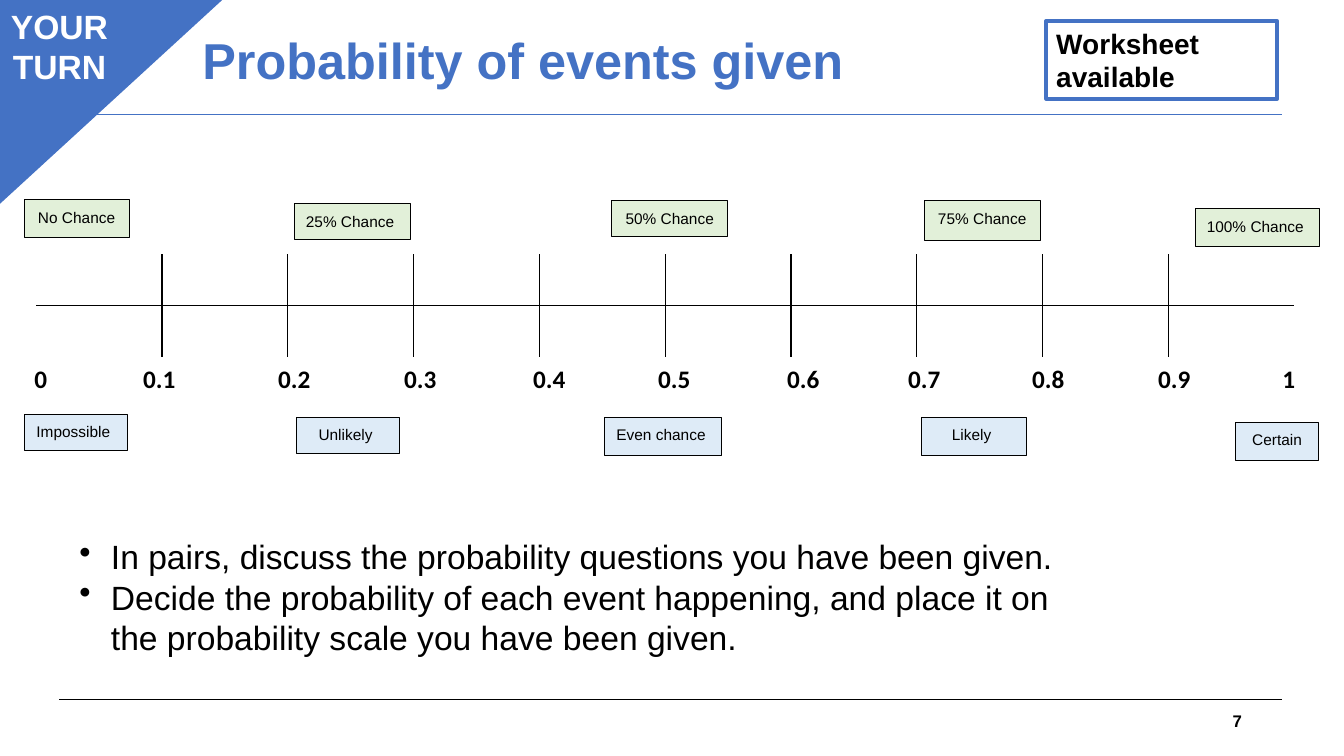
"""Build a slide with a probability scale on a grid of 160 columns by 90 rows."""
from dataclasses import dataclass
from typing import Any, Optional

import lxml.etree
import pptx
import pptx.dml.color
import pptx.enum.shapes
import pptx.enum.text
import pptx.oxml
import pptx.oxml.ns
import pptx.util

COLUMNS, ROWS = 160, 90
BLUE, BLACK, WHITE, GREEN, PALE = "4472C4", "000000", "FFFFFF", "E2F0D9", "DEEBF7"
ALIGN = pptx.enum.text.PP_ALIGN
ANCHOR = pptx.enum.text.MSO_ANCHOR
SHAPE = pptx.enum.shapes.MSO_SHAPE
NAMESPACE = pptx.oxml.ns.nsdecls("a")


@dataclass(frozen=True)
class Area:
    left: float
    top: float
    width: float
    height: float


@dataclass(frozen=True)
class Style:
    size: float
    color: str = BLACK
    bold: bool = False
    align: Any = ALIGN.LEFT
    font: str = "Arial"
    spacing: Optional[float] = None
    bullet: bool = False


@dataclass(frozen=True)
class Label:
    text: str
    area: Area
    fill: str


@dataclass(frozen=True)
class Rule:
    row: float
    color: str


TAG = Style(11, align=ALIGN.CENTER)
NUMBER = Style(18, bold=True, font="Calibri")

RULES = [Rule(83.28, BLACK), Rule(13.68, BLUE)]
CHANCES = [
    Label("No Chance", Area(2.88, 23.76, 12.48, 4.56), GREEN),
    Label("25% Chance ", Area(35.04, 24.24, 13.8, 4.32), GREEN),
    Label("50% Chance", Area(72.84, 23.88, 13.8, 4.32), GREEN),
    Label("75% Chance", Area(110.04, 23.88, 13.8, 4.68), GREEN),
    Label("100% Chance ", Area(142.32, 24.84, 14.76, 4.44), GREEN),
]
WORDS = [
    Label("Impossible ", Area(2.88, 49.32, 12.24, 4.32), PALE),
    Label("Unlikely ", Area(35.28, 49.68, 12.24, 4.32), PALE),
    Label("Even chance ", Area(72, 49.68, 13.92, 4.56), PALE),
    Label("Likely ", Area(109.68, 49.68, 12.48, 4.56), PALE),
    Label("Certain", Area(147.12, 50.28, 9.84, 4.56), PALE),
]
SCALE_WIDTHS = [14.98] * 10
NUMBER_WIDTHS = [12.96, 16.08, 15, 15.36, 14.88, 15.36, 14.4, 14.76, 15, 23.4]
LAST_NUMBER_TAB = 14.8
TASKS = [
    "In pairs, discuss the probability questions you have been given.",
    "Decide the probability of each event happening, and place it on "
    "the probability scale you have been given.",
]

deck = pptx.Presentation()
deck.slide_width = pptx.util.Inches(13.33)
deck.slide_height = pptx.util.Inches(7.5)
page = deck.slides.add_slide(deck.slide_layouts[6])


def across(columns: float) -> int:
    """Turn grid columns into a length."""
    return round(deck.slide_width * columns / COLUMNS)


def down(rows: float) -> int:
    """Turn grid rows into a length."""
    return round(deck.slide_height * rows / ROWS)


def place(area: Area) -> tuple[int, int, int, int]:
    """Turn an area of the grid into left, top, width and height."""
    return across(area.left), down(area.top), across(area.width), down(area.height)


def paint(value: str) -> pptx.dml.color.RGBColor:
    """Turn a hex string into a colour."""
    return pptx.dml.color.RGBColor.from_string(value)


def write(frame: Any, lines: list[str], style: Style, anchor: Any = ANCHOR.TOP) -> None:
    """Fill a text frame with one paragraph for each line."""
    frame.word_wrap = True
    frame.vertical_anchor = anchor
    for index, line in enumerate(lines):
        para = frame.add_paragraph() if index else frame.paragraphs[0]
        para.text = line
        para.alignment = style.align
        para.font.name = style.font
        para.font.size = pptx.util.Pt(style.size)
        para.font.bold = style.bold
        para.font.color.rgb = paint(style.color)
        if style.spacing:
            para.line_spacing = style.spacing
        if style.bullet:
            properties = para._p.get_or_add_pPr()
            properties.set("marL", str(across(3.75)))
            properties.set("indent", str(-across(3.75)))
            properties.insert(0, pptx.oxml.parse_xml(f'<a:buChar {NAMESPACE} char="•"/>'))


def add_text(area: Area, lines: list[str], style: Style, anchor: Any = ANCHOR.TOP) -> None:
    """Add a text box."""
    write(page.shapes.add_textbox(*place(area)).text_frame, lines, style, anchor)


def add_box(area: Area, fill: Optional[str], line: str, width: float, kind: Any = SHAPE.RECTANGLE) -> Any:
    """Add an outlined shape."""
    box = page.shapes.add_shape(kind, *place(area))
    box.shadow.inherit = False
    if fill:
        box.fill.solid()
        box.fill.fore_color.rgb = paint(fill)
    else:
        box.fill.background()
    box.line.color.rgb = paint(line)
    box.line.width = pptx.util.Pt(width)
    return box


def add_label(label: Label) -> None:
    """Add a small tag beside the scale."""
    frame = add_box(label.area, label.fill, BLACK, 0.5).text_frame
    frame.margin_top = down(0.96)
    write(frame, [label.text], TAG)


def add_rule(rule: Rule) -> None:
    """Add a horizontal line across the page."""
    height = down(rule.row)
    kind = pptx.enum.shapes.MSO_CONNECTOR.STRAIGHT
    line = page.shapes.add_connector(kind, across(7.08), height, across(152.64), height)
    line.line.color.rgb = paint(rule.color)
    line.line.width = pptx.util.Pt(0.75)
    lxml.etree.SubElement(line.element.spPr, pptx.oxml.ns.qn("a:effectLst"))


def set_borders(cell: Any, colors: dict[str, str]) -> None:
    """Clear a cell's fill and colour the named sides, hiding the others."""
    cell.fill.background()
    properties = cell._tc.get_or_add_tcPr()
    for index, side in enumerate("LRTB"):
        ink = (f'<a:solidFill><a:srgbClr val="{colors[side]}"/></a:solidFill>'
               if side in colors else "<a:noFill/>")
        border = f'<a:ln{side} {NAMESPACE} w="12700">{ink}</a:ln{side}>'
        properties.insert(index, pptx.oxml.parse_xml(border))


def add_grid(left: float, top: float, widths: list[float], row_height: float) -> Any:
    """Add a plain table of two rows."""
    area = Area(left, top, sum(widths), 2 * row_height)
    table = page.shapes.add_table(2, len(widths), *place(area)).table
    table.first_row = table.horz_banding = False
    for column, width in zip(table.columns, widths):
        column.width = across(width)
    return table


def add_scale() -> None:
    """Add the scale, whose ticks are the inner borders of a table."""
    table = add_grid(4.32, 30.24, SCALE_WIDTHS, 6.12)
    last = len(SCALE_WIDTHS) - 1
    for row, middle in enumerate("BT"):
        for column in range(last + 1):
            sides = middle + "L" * (column > 0) + "R" * (column < last)
            set_borders(table.cell(row, column), dict.fromkeys(sides, BLACK))


def add_numbers() -> None:
    """Add the numbers below the scale."""
    table = add_grid(2.88, 42.84, NUMBER_WIDTHS, 5.04)
    for cell in table.iter_cells():
        set_borders(cell, dict.fromkeys("LRTB", WHITE))
    for column in range(len(NUMBER_WIDTHS)):
        text = f"{column / 10:g}" + ("\t1" if column == 9 else "")
        write(table.cell(0, column).text_frame, [text], NUMBER)
    properties = table.cell(0, 9).text_frame.paragraphs[0]._p.get_or_add_pPr()
    stop = f'<a:tabLst {NAMESPACE}><a:tab pos="{across(LAST_NUMBER_TAB)}" algn="l"/></a:tabLst>'
    properties.insert(0, pptx.oxml.parse_xml(stop))


def add_corner() -> None:
    """Add the blue corner with its heading."""
    corner = add_box(Area(-0.36, -0.72, 27.48, 25.2), BLUE, BLUE, 1, SHAPE.ISOSCELES_TRIANGLE)
    corner.adjustments[0] = 0
    corner.element.spPr.find(pptx.oxml.ns.qn("a:xfrm")).set("flipV", "1")
    heading = add_box(Area(0, 0.12, 14.16, 10.92), BLUE, BLUE, 0.75)
    write(heading.text_frame, ["YOUR ", "TURN"], Style(24, WHITE, True, ALIGN.CENTER))


def main() -> None:
    """Draw the slide from back to front and save it."""
    for rule in RULES:
        add_rule(rule)
    add_text(Area(113.04, 83.4, 36, 4.8), ["7"], Style(12, bold=True, align=ALIGN.RIGHT), ANCHOR.MIDDLE)
    add_text(Area(22.92, 1.44, 101.76, 12.24), ["Probability of events given"],
             Style(36, BLUE, True, spacing=0.9), ANCHOR.MIDDLE)
    for label in CHANCES:
        add_label(label)
    add_scale()
    add_numbers()
    for label in WORDS:
        add_label(label)
    add_corner()
    add_text(Area(8.28, 63.24, 122.64, 15.72), TASKS, Style(24, bullet=True))
    worksheet = add_box(Area(124.56, 2.52, 27.48, 9.24), None, BLUE, 3)
    write(worksheet.text_frame, ["Worksheet\vavailable"], Style(20, bold=True))
    deck.save("out.pptx")


if __name__ == "__main__":
    main()
